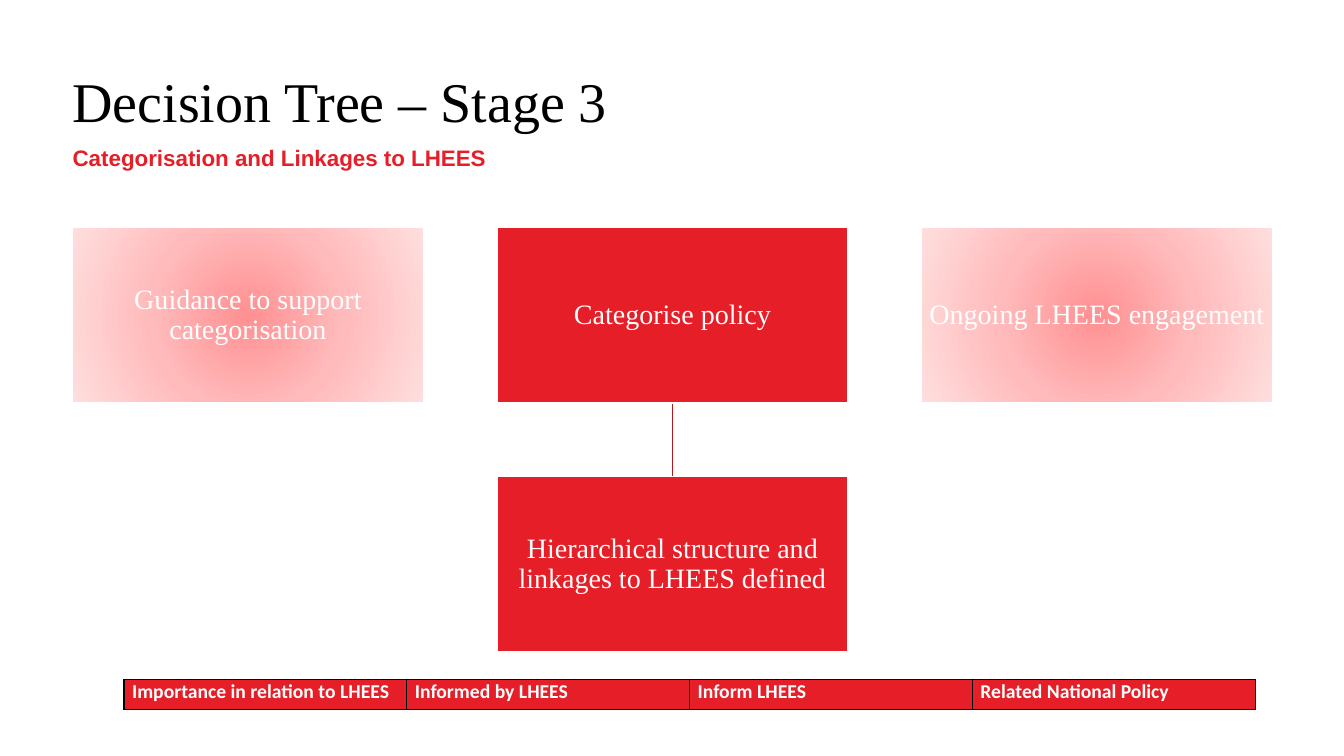
from pptx import Presentation
from pptx.dml.color import RGBColor
from pptx.enum.shapes import MSO_CONNECTOR, MSO_SHAPE
from pptx.enum.text import MSO_ANCHOR, PP_ALIGN
from pptx.oxml import parse_xml
from pptx.oxml.ns import nsdecls, qn
from pptx.util import Inches, Pt
from lxml.etree import SubElement

RED, DARK_RED, WHITE, BLACK = "E61E28", "B81820", "FFFFFF", "000000"
SERIF = "Times New Roman"
GLOW = [(0, "FF9092"), (50, "FFBBBC"), (100, "FFDEDE")]

TITLE = "Decision Tree – Stage 3"
SUBTITLE = "Categorisation and Linkages to LHEES"
# name: (text, column, row, highlighted)
BOXES = {
    "guidance": ("Guidance to support categorisation", 0, 0, False),
    "categorise": ("Categorise policy", 1, 0, True),
    "hierarchy": ("Hierarchical structure and linkages to LHEES defined", 1, 1, True),
    "engagement": ("Ongoing LHEES engagement", 2, 0, False),
}
TABLE_HEADINGS = ["Importance in relation to LHEES", "Informed by LHEES",
                  "Inform LHEES", "Related National Policy"]

LEFT, TREE_TOP = 0.72, 2.26
BOX_WIDTH, BOX_HEIGHT, GAP = 3.48, 1.74, 0.73
TABLE_LEFT, TABLE_TOP, TABLE_WIDTH, TABLE_HEIGHT = 1.23, 6.74, 11.22, 0.3


def color(hex_value):
    return RGBColor.from_string(hex_value)


def style(paragraph, font_name, size, hex_value, bold=False):
    for run in paragraph.runs:
        run.font.name = font_name
        run.font.size = Pt(size)
        run.font.bold = bold
        run.font.color.rgb = color(hex_value)


def set_margins(target, inches):
    target.margin_left = target.margin_right = Inches(inches)
    target.margin_top = target.margin_bottom = Inches(inches)


def add_heading(slide, text, top, width, height, *font):
    box = slide.shapes.add_textbox(Inches(LEFT), Inches(top), Inches(width), Inches(height))
    frame = box.text_frame
    frame.word_wrap = True
    set_margins(frame, 0)
    frame.text = text
    style(frame.paragraphs[0], *font)
    return frame.paragraphs[0]


def fill_with_glow(shape):
    """Fill the shape with a circular gradient spreading from its centre."""
    stops = "".join(f'<a:gs pos="{percent * 1000}"><a:srgbClr val="{value}"/></a:gs>'
                    for percent, value in GLOW)
    gradient = parse_xml(
        f'<a:gradFill {nsdecls("a")} rotWithShape="1"><a:gsLst>{stops}</a:gsLst>'
        '<a:path path="circle"><a:fillToRect l="50000" t="50000" r="50000" b="50000"/>'
        '</a:path></a:gradFill>')
    shape.fill.gradient()
    properties = shape.element.spPr
    properties.replace(properties.find(qn("a:gradFill")), gradient)


def add_box(slide, text, column, row, highlighted):
    shape = slide.shapes.add_shape(
        MSO_SHAPE.RECTANGLE,
        Inches(LEFT + column * (BOX_WIDTH + GAP)),
        Inches(TREE_TOP + row * (BOX_HEIGHT + GAP)),
        Inches(BOX_WIDTH), Inches(BOX_HEIGHT))
    shape.shadow.inherit = False
    if highlighted:
        shape.fill.solid()
        shape.fill.fore_color.rgb = color(RED)
    else:
        fill_with_glow(shape)
    shape.line.color.rgb = color(WHITE)
    shape.line.width = Pt(1)
    frame = shape.text_frame
    frame.word_wrap = True
    frame.vertical_anchor = MSO_ANCHOR.MIDDLE
    set_margins(frame, 0.01)
    frame.text = text
    paragraph = frame.paragraphs[0]
    paragraph.alignment = PP_ALIGN.CENTER
    paragraph.line_spacing = 0.9
    style(paragraph, SERIF, 20, WHITE)
    return shape


def add_tree(slide):
    connector = slide.shapes.add_connector(MSO_CONNECTOR.STRAIGHT, 0, 0, 0, 0)
    connector.line.color.rgb = color(DARK_RED)
    connector.line.width = Pt(1)
    SubElement(connector.element.spPr, qn("a:effectLst"))
    boxes = {name: add_box(slide, *box) for name, box in BOXES.items()}
    connector.begin_connect(boxes["categorise"], 2)
    connector.end_connect(boxes["hierarchy"], 0)


def add_borders(cell):
    properties = cell._tc.get_or_add_tcPr()
    for index, side in enumerate(("lnL", "lnR", "lnT", "lnB")):
        properties.insert(index, parse_xml(
            f'<a:{side} {nsdecls("a")} w="{Pt(1)}"><a:solidFill>'
            f'<a:srgbClr val="{BLACK}"/></a:solidFill></a:{side}>'))


def add_heading_table(slide):
    count = len(TABLE_HEADINGS)
    table = slide.shapes.add_table(1, count, Inches(TABLE_LEFT), Inches(TABLE_TOP),
                                   Inches(TABLE_WIDTH), Inches(TABLE_HEIGHT)).table
    for column, heading in enumerate(TABLE_HEADINGS):
        table.columns[column].width = Inches(TABLE_WIDTH / count)
        cell = table.cell(0, column)
        set_margins(cell, 0)
        cell.margin_left = Inches(0.08)
        cell.margin_bottom = Inches(0.02)
        cell.fill.solid()
        cell.fill.fore_color.rgb = color(RED)
        add_borders(cell)
        cell.text = heading
        style(cell.text_frame.paragraphs[0], "Calibri", 14, WHITE, True)


def main():
    presentation = Presentation()
    presentation.slide_width = Inches(13.33)
    presentation.slide_height = Inches(7.5)
    slide = presentation.slides.add_slide(presentation.slide_layouts[6])
    title = add_heading(slide, TITLE, 0.72, 9.87, 0.58, SERIF, 40, BLACK)
    title.line_spacing = Pt(44)
    add_heading(slide, SUBTITLE, 1.43, 5.82, 0.27, "Arial", 16, RED, True)
    add_tree(slide)
    add_heading_table(slide)
    presentation.save("out.pptx")


if __name__ == "__main__":
    main()
